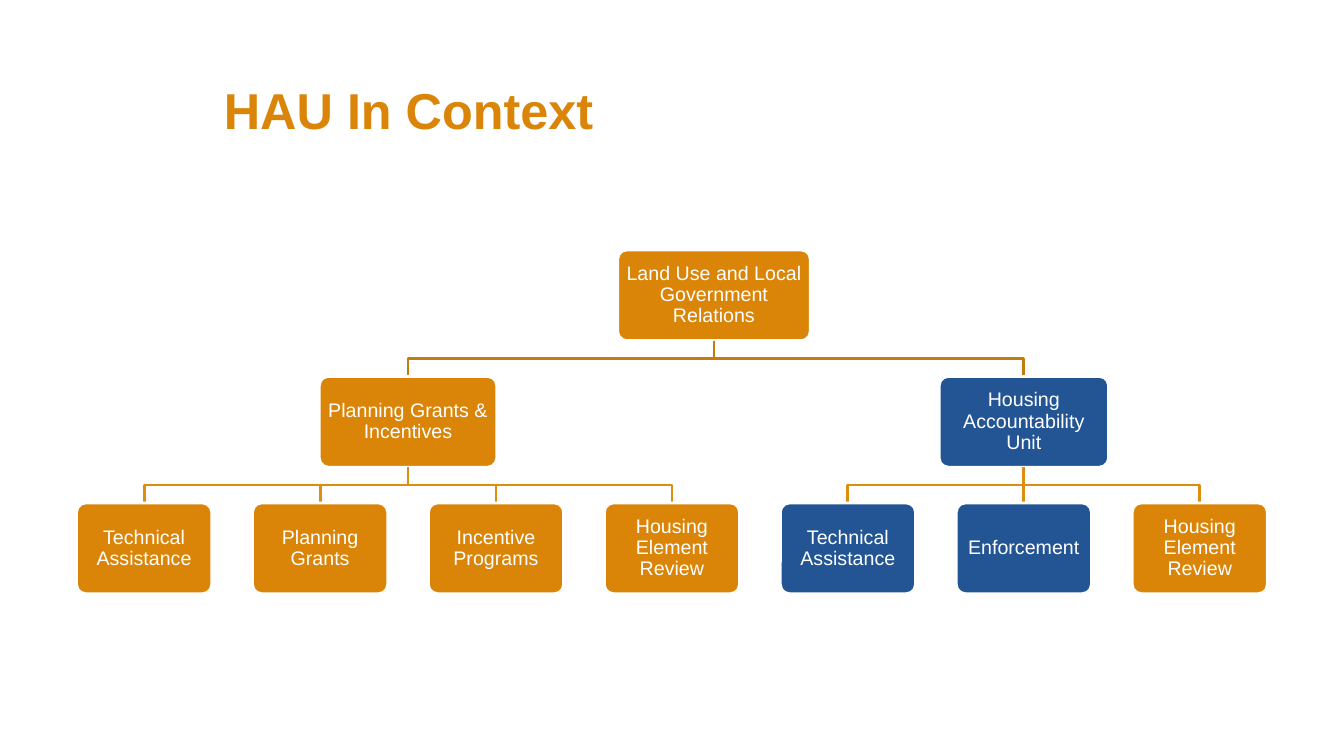
from dataclasses import dataclass, field

from lxml import etree
from pptx import Presentation
from pptx import util as u
from pptx.dml.color import RGBColor
from pptx.enum import shapes, text
from pptx.oxml.ns import qn

ORANGE = RGBColor(0xDA, 0x85, 0x08)
BLUE = RGBColor(0x23, 0x55, 0x95)
WHITE = RGBColor(0xFF, 0xFF, 0xFF)
UPPER_LINE = RGBColor(0xC5, 0x7C, 0x0E)
LOWER_LINE = RGBColor(0xDF, 0x8D, 0x0F)

LEAF_WIDTH = 1.34
BOX_HEIGHT = 0.9
LEVELS = 3


@dataclass
class Unit:
    name: str
    color: RGBColor = ORANGE
    width: float = LEAF_WIDTH
    children: list = field(default_factory=list)
    left: float = 0

    @property
    def center(self):
        return self.left + self.width / 2


ORGANIZATION = Unit("Land Use and Local Government Relations", width=1.91, children=[
    Unit("Planning Grants & Incentives", width=1.76, children=[
        Unit("Technical Assistance"),
        Unit("Planning Grants"),
        Unit("Incentive Programs"),
        Unit("Housing Element Review"),
    ]),
    Unit("Housing Accountability Unit", BLUE, 1.68, children=[
        Unit("Technical Assistance", BLUE),
        Unit("Enforcement", BLUE),
        Unit("Housing Element Review"),
    ]),
])


def write(shape, words, size, color, bold=False, align=None, spacing=None, inset=0):
    frame = shape.text_frame
    frame.word_wrap = True
    frame.vertical_anchor = text.MSO_ANCHOR.MIDDLE
    frame.margin_left = frame.margin_right = u.Inches(inset)
    frame.margin_top = frame.margin_bottom = u.Inches(inset)
    para = frame.paragraphs[0]
    para.alignment = align
    para.line_spacing = spacing
    span = para.add_run()
    span.text = words
    span.font.name = "Arial"
    span.font.size = u.Pt(size)
    span.font.bold = bold
    span.font.color.rgb = color


def add_title(page, words, left, top, width, height):
    box = page.shapes.add_textbox(*map(u.Inches, (left, top, width, height)))
    write(box, words, 36, ORANGE, bold=True)


def leaves_of(unit):
    if not unit.children:
        return [unit]
    return [leaf for child in unit.children for leaf in leaves_of(child)]


def center_over_children(unit):
    """Place each parent midway between the outer edges of its children."""
    for child in unit.children:
        center_over_children(child)
    if unit.children:
        first, last = unit.children[0], unit.children[-1]
        unit.left = (first.left + last.left + last.width - unit.width) / 2


def add_box(page, unit, top):
    box = page.shapes.add_shape(
        shapes.MSO_SHAPE.ROUNDED_RECTANGLE,
        *map(u.Inches, (unit.left, top, unit.width, BOX_HEIGHT)))
    box.adjustments[0] = 0.1
    box.shadow.inherit = False
    box.fill.solid()
    box.fill.fore_color.rgb = unit.color
    box.line.color.rgb = WHITE
    box.line.width = u.Pt(2)
    write(box, unit.name, 14, WHITE, align=text.PP_ALIGN.CENTER, spacing=0.9, inset=0.06)
    return box


def add_elbow(page, x1, y1, x2, y2):
    middle = (y1 + y2) / 2
    builder = page.shapes.build_freeform(u.Inches(x1), u.Inches(y1))
    corners = [(x1, middle), (x2, middle), (x2, y2)]
    builder.add_line_segments(
        [(u.Inches(x), u.Inches(y)) for x, y in corners], close=False)
    elbow = builder.convert_to_shape()
    elbow.fill.background()
    elbow.shadow.inherit = False
    return elbow


def add_straight(page, x1, y1, x2, y2):
    line = page.shapes.add_connector(
        shapes.MSO_CONNECTOR.STRAIGHT, *map(u.Inches, (x1, y1, x2, y2)))
    etree.SubElement(line._element.spPr, qn("a:effectLst"))
    return line


def add_branch(page, unit, top, pitch, line_color=UPPER_LINE):
    """Draw a unit with everything below it and return the unit's box."""
    box = add_box(page, unit, top)
    for child in unit.children:
        straight = abs(child.center - unit.center) < 0.01
        add_line = add_straight if straight else add_elbow
        line = add_line(page, unit.center, top + BOX_HEIGHT, child.center, top + pitch)
        line.line.color.rgb = line_color
        line.line.width = u.Pt(2)
        child_box = add_branch(page, child, top + pitch, pitch, LOWER_LINE)
        if straight:
            line.begin_connect(box, 2)
            line.end_connect(child_box, 0)
    return box


def add_organization_chart(page, root, left, top, width, height):
    leaves = leaves_of(root)
    column = (width - LEAF_WIDTH) / (len(leaves) - 1)
    for index, leaf in enumerate(leaves):
        leaf.left = left + index * column
    center_over_children(root)
    add_branch(page, root, top, (height - BOX_HEIGHT) / (LEVELS - 1))


def main():
    deck = Presentation()
    deck.slide_width = u.Inches(13.33)
    deck.slide_height = u.Inches(7.5)
    page = deck.slides.add_slide(deck.slide_layouts[6])
    add_title(page, "HAU In Context", 2.22, 0.5, 9.89, 1.17)
    add_organization_chart(page, ORGANIZATION, 0.76, 2.48, 11.81, 3.41)
    deck.save("out.pptx")


if __name__ == "__main__":
    main()
